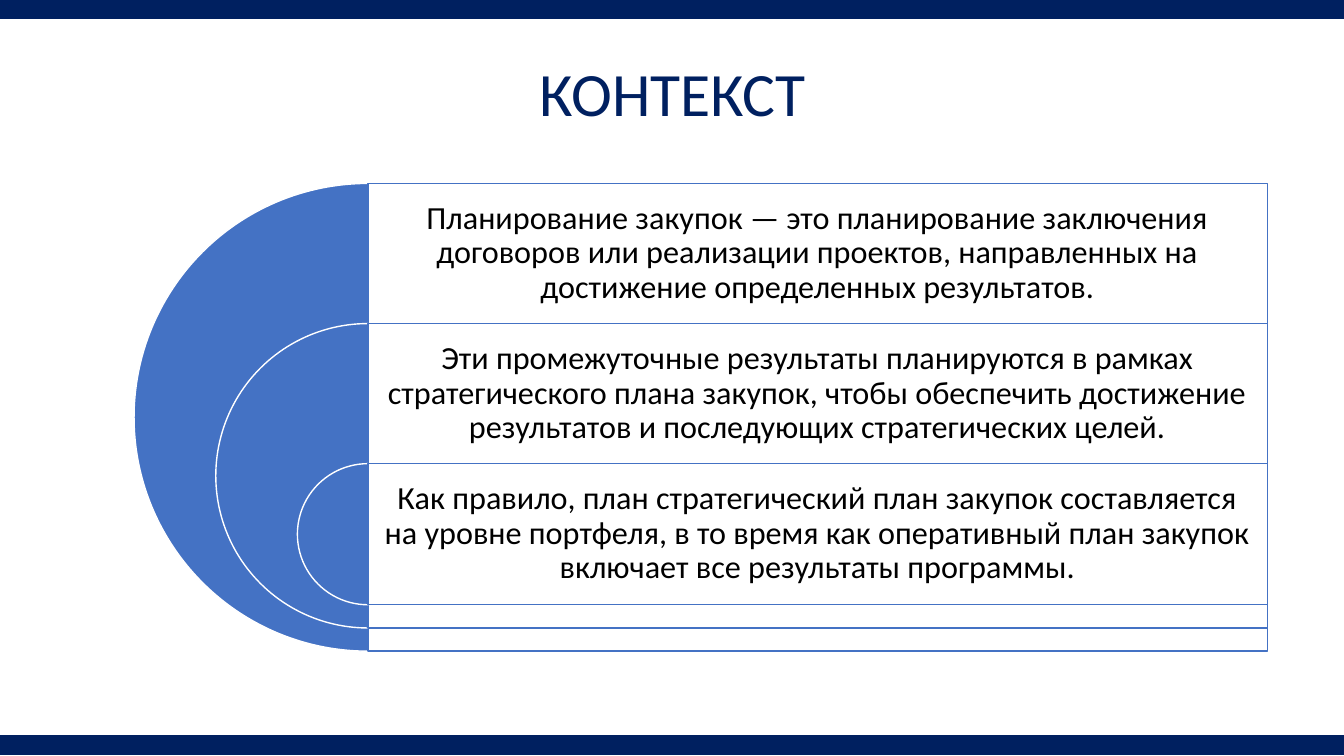
from lxml import etree
from pptx import Presentation
from pptx.dml.color import RGBColor
from pptx.enum.shapes import MSO_SHAPE
from pptx.enum.text import MSO_ANCHOR, MSO_AUTO_SIZE, PP_ALIGN
from pptx.oxml.ns import qn
from pptx.util import Emu, Pt

RECT, PIE = MSO_SHAPE.RECTANGLE, MSO_SHAPE.PIE
MIDDLE, CENTER = MSO_ANCHOR.MIDDLE, PP_ALIGN.CENTER
NO_FIT = MSO_AUTO_SIZE.NONE

WIDTH, HEIGHT = 1333, 750
NAVY, BLUE, WHITE, BLACK = "002060", "4472C4", "FFFFFF", "000000"
FONT = "Calibri"

TITLE = "КОНТЕКСТ"
POINTS = [
    "Планирование закупок — это планирование заключения договоров или "
    "реализации проектов, направленных на достижение определенных результатов.",
    "Эти промежуточные результаты планируются в рамках стратегического плана "
    "закупок, чтобы обеспечить достижение результатов и последующих "
    "стратегических целей.",
    "Как правило, план стратегический план закупок составляется на уровне "
    "портфеля, в то время как оперативный план закупок включает все "
    "результаты программы.",
]


def px(n):
    """100 px to the inch."""
    return Emu(int(n * 9144))


def color(code):
    return RGBColor.from_string(code)


def add_form(slide, kind, box, fill, line):
    form = slide.shapes.add_shape(kind, *map(px, box))
    form.shadow.inherit = False
    form.fill.solid()
    form.fill.fore_color.rgb = color(fill)
    form.line.color.rgb = color(line)
    form.line.width = Pt(1)
    return form


def set_alpha(form, percent):
    tone = form.fill._xPr.find(qn("a:solidFill"))[0]
    etree.SubElement(tone, qn("a:alpha")).set("val", str(percent * 1000))


def write(frame, text, size, code):
    frame.word_wrap = True
    frame.auto_size = NO_FIT
    frame.vertical_anchor = MIDDLE
    frame.text = text
    para = frame.paragraphs[0]
    para.alignment = CENTER
    para.line_spacing = 0.9
    font = para.runs[0].font
    font.name, font.size = FONT, Pt(size)
    font.color.rgb = color(code)


def add_bands(slide, high):
    for top in (HEIGHT - 2 - high, 0):
        add_form(slide, RECT, (0, top, WIDTH, high), NAVY, NAVY)


def add_title(slide, box):
    title = slide.shapes.title
    title.left, title.top, title.width, title.height = map(px, box)
    write(title.text_frame, TITLE, 44, NAVY)


def add_nest(slide, box):
    """Nested half discs, each with a panel reaching the right edge."""
    left, top, width, size = box
    step = size * 3 // 10
    inset = size // 20
    axis = left + size / 2
    wide = left + width - axis
    for i, text in enumerate(POINTS):
        y = top + i * step
        side = size - i * (step + inset)
        # Left half disc
        disc = add_form(slide, PIE, (axis - side / 2, y, side, side), BLUE, WHITE)
        disc.adjustments[0], disc.adjustments[1] = 54, 162
        # Panel
        panel = add_form(slide, RECT, (axis, y, wide, side), WHITE, BLUE)
        set_alpha(panel, 90)
        # Text
        label = slide.shapes.add_textbox(*map(px, (axis, y, wide, step)))
        frame = label.text_frame
        frame.margin_left = frame.margin_right = px(10)
        frame.margin_top = frame.margin_bottom = px(10)
        write(frame, text, 23, BLACK)


def main():
    deck = Presentation()
    deck.slide_width, deck.slide_height = px(WIDTH), px(HEIGHT)
    slide = deck.slides.add_slide(deck.slide_layouts[5])
    add_bands(slide, 18)
    add_title(slide, (217, 33, 900, 125))
    add_nest(slide, (133, 182, 1124, 464))
    deck.save("out.pptx")


if __name__ == "__main__":
    main()
